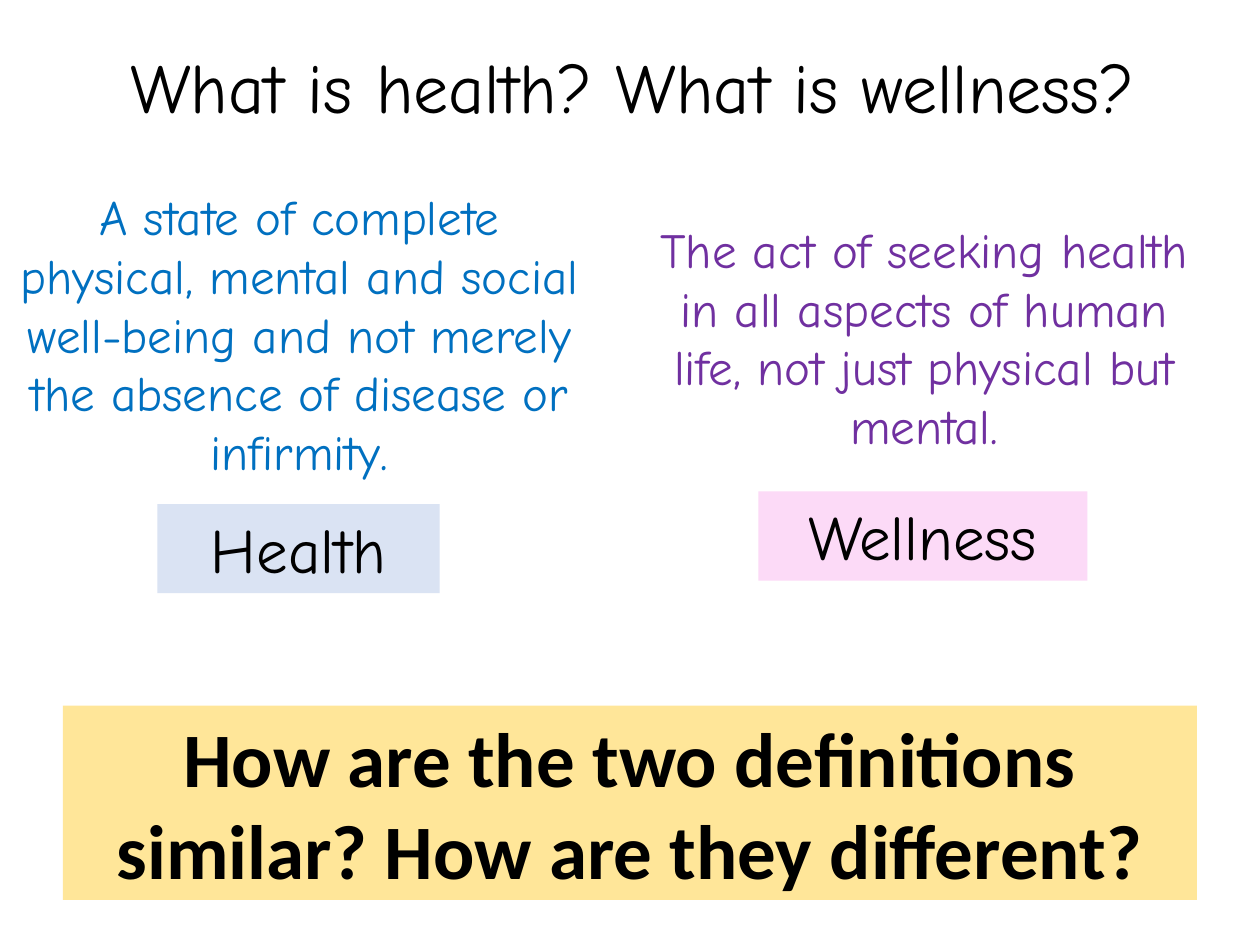
from dataclasses import dataclass

from pptx import Presentation
from pptx.dml.color import RGBColor
from pptx.enum.shapes import MSO_SHAPE
from pptx.enum.text import MSO_ANCHOR, PP_ALIGN
from pptx.util import Pt


@dataclass(frozen=True)
class Theme:
    hand: str = "Comic Neue"
    plain: str = "Calibri"
    black: str = "000000"
    blue: str = "0070C0"
    purple: str = "7030A0"
    pale_blue: str = "DAE3F3"
    pale_pink: str = "FCDAF7"
    yellow: str = "FFE699"
    body: int = 28
    label: int = 36
    title: int = 40
    question: int = 44


THEME = Theme()


def write(s, text, size, color=THEME.black, font=THEME.hand, bold=False,
          anchor=MSO_ANCHOR.TOP):
    """Fill a shape with one centred, wrapped paragraph."""
    tf = s.text_frame
    for name, value in {"word_wrap": True, "vertical_anchor": anchor}.items():
        setattr(tf, name, value)
    p = tf.paragraphs[0]
    p.alignment = PP_ALIGN.CENTER
    r = p.add_run()
    r.text = text
    for name, value in {"name": font, "size": Pt(size), "bold": bold}.items():
        setattr(r.font, name, value)
    r.font.color.rgb = RGBColor.from_string(color)


def add_text(slide, box, text, size, **style):
    s = slide.shapes.add_textbox(*map(Pt, box))
    write(s, text, size, **style)


def add_panel(slide, box, fill, text, size, **style):
    """Add a filled rectangle with no outline."""
    s = slide.shapes.add_shape(MSO_SHAPE.RECTANGLE, *map(Pt, box))
    s.shadow.inherit = False
    s.fill.solid()
    s.fill.fore_color.rgb = RGBColor.from_string(fill)
    s.line.fill.background()
    write(s, text, size, **style)


def main():
    prs = Presentation()
    prs.slide_width, prs.slide_height = Pt(720), Pt(540)
    slide = prs.slides.add_slide(prs.slide_layouts[6])

    add_panel(slide, (36, 403.2, 648, 111), THEME.yellow,
              "How are the two definitions similar? How are they different?",
              THEME.question, font=THEME.plain, bold=True,
              anchor=MSO_ANCHOR.MIDDLE)
    add_text(slide, (0, 103, 342, 177),
             "A state of complete physical, mental and social well-being "
             "and not merely the absence of disease or infirmity.",
             THEME.body, color=THEME.blue)
    add_text(slide, (364.3, 121.7, 327.6, 143.3),
             "The act of seeking health in all aspects of human life, "
             "not just physical but mental.",
             THEME.body, color=THEME.purple)
    add_text(slide, (18, 21.6, 686.9, 55.4),
             "What is health? What is wellness?", THEME.title)
    add_panel(slide, (90, 288, 161.3, 51), THEME.pale_blue,
              "Health", THEME.label)
    add_panel(slide, (433.4, 280.8, 188, 51), THEME.pale_pink,
              "Wellness", THEME.label)

    prs.save("out.pptx")


if __name__ == "__main__":
    main()
